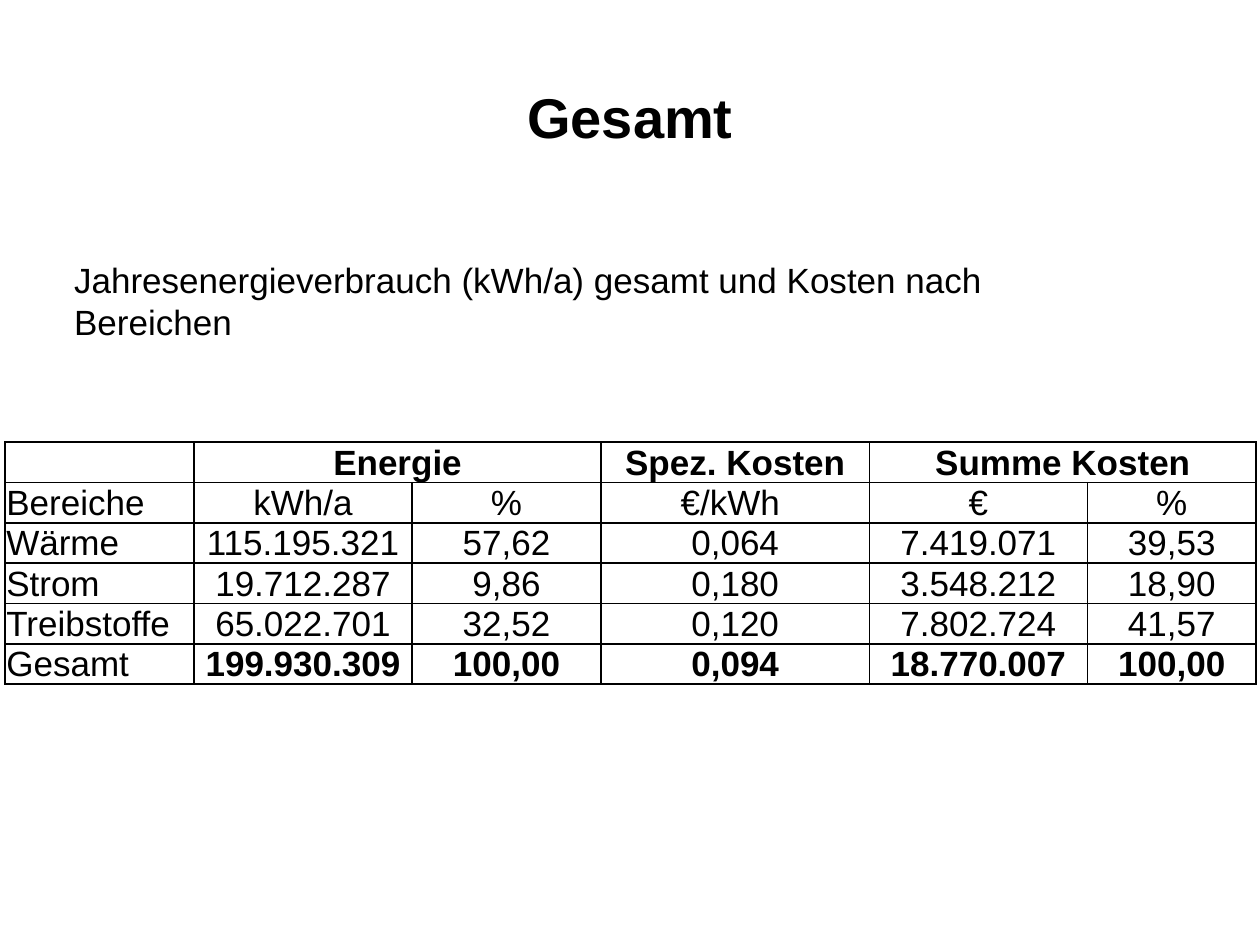
from lxml import etree
from pptx import Presentation
from pptx.dml.color import RGBColor
from pptx.enum.text import MSO_ANCHOR, PP_ALIGN
from pptx.oxml.ns import qn
from pptx.util import Inches, Pt

LEFT, CENTER = PP_ALIGN.LEFT, PP_ALIGN.CENTER
MIDDLE, BOTTOM = MSO_ANCHOR.MIDDLE, MSO_ANCHOR.BOTTOM
TITLE_ONLY = 5

# Content
TITLE = "Gesamt"
SUBTITLE = "Jahresenergieverbrauch (kWh/a) gesamt und Kosten nach Bereichen"
ROWS = [
    ["", "Energie", "", "Spez. Kosten", "Summe Kosten", ""],
    ["Bereiche", "kWh/a", "%", "€/kWh ", "€", "%"],
    ["Wärme", "115.195.321", "57,62", "0,064", "7.419.071", "39,53"],
    ["Strom", "19.712.287", "9,86", "0,180", "3.548.212", "18,90"],
    ["Treibstoffe", "65.022.701", "32,52", "0,120", "7.802.724", "41,57"],
    ["Gesamt", "199.930.309", "100,00", "0,094", "18.770.007", "100,00"],
]
HEADER_STARTS = [1, 4]  # columns where a header spans two columns
COLUMN_WIDTHS = [1.5, 1.73, 1.5, 2.13, 1.73, 1.34]
ROW_HEIGHT = 0.32
COLORS = {"text": "000000", "border": "000000"}
CELL_FORMAT = {
    "margin_left": Inches(0.01),
    "margin_right": Inches(0.01),
    "margin_top": Inches(0.01),
    "margin_bottom": 0,
    "vertical_anchor": BOTTOM,
}


def apply(target, values):
    for name, value in values.items():
        setattr(target, name, value)


def place(shape, left, top, width, height):
    apply(shape, {"left": Inches(left), "top": Inches(top),
                  "width": Inches(width), "height": Inches(height)})


def write(text_frame, text, size, alignment=LEFT, bold=False):
    paragraph = text_frame.paragraphs[0]
    paragraph.alignment = alignment
    run = paragraph.add_run()
    run.text = text
    apply(run.font, {"name": "Arial", "size": Pt(size), "bold": bold})
    run.font.color.rgb = RGBColor.from_string(COLORS["text"])


def add_borders(cell):
    properties = cell._tc.get_or_add_tcPr()
    for position, side in enumerate(("a:lnL", "a:lnR", "a:lnT", "a:lnB")):
        line = etree.Element(qn(side), w=str(Pt(1)))
        fill = etree.SubElement(line, qn("a:solidFill"))
        etree.SubElement(fill, qn("a:srgbClr"), val=COLORS["border"])
        properties.insert(position, line)


presentation = Presentation()
presentation.slide_width = Inches(10)
presentation.slide_height = Inches(7.5)
slide = presentation.slides.add_slide(presentation.slide_layouts[TITLE_ONLY])

# Title
title = slide.shapes.title
place(title, 0.5, 0.3, 9, 1.25)
title.text_frame.vertical_anchor = MIDDLE
write(title.text_frame, TITLE, 32, CENTER, True)

# Energy and cost table
frame = slide.shapes.add_table(
    len(ROWS), len(COLUMN_WIDTHS), Inches(0.04), Inches(3.51),
    Inches(sum(COLUMN_WIDTHS)), Inches(ROW_HEIGHT * len(ROWS)))
table = frame.table
apply(table, {"first_row": False, "horz_banding": False})
for column, width in zip(table.columns, COLUMN_WIDTHS):
    column.width = Inches(width)
for row_index, values in enumerate(ROWS):
    table.rows[row_index].height = Inches(ROW_HEIGHT)
    for column_index, value in enumerate(values):
        cell = table.cell(row_index, column_index)
        apply(cell, CELL_FORMAT)
        cell.fill.background()
        add_borders(cell)
        if value:
            is_label = column_index == 0
            bold = not is_label and row_index in (0, len(ROWS) - 1)
            write(cell.text_frame, value, 20, LEFT if is_label else CENTER, bold)
for start in HEADER_STARTS:
    table.cell(0, start).merge(table.cell(0, start + 1))

# Subtitle
subtitle = slide.shapes.add_textbox(
    Inches(0.49), Inches(2), Inches(7.66), Inches(1.07))
subtitle.text_frame.word_wrap = True
write(subtitle.text_frame, SUBTITLE, 20)

presentation.save("out.pptx")
